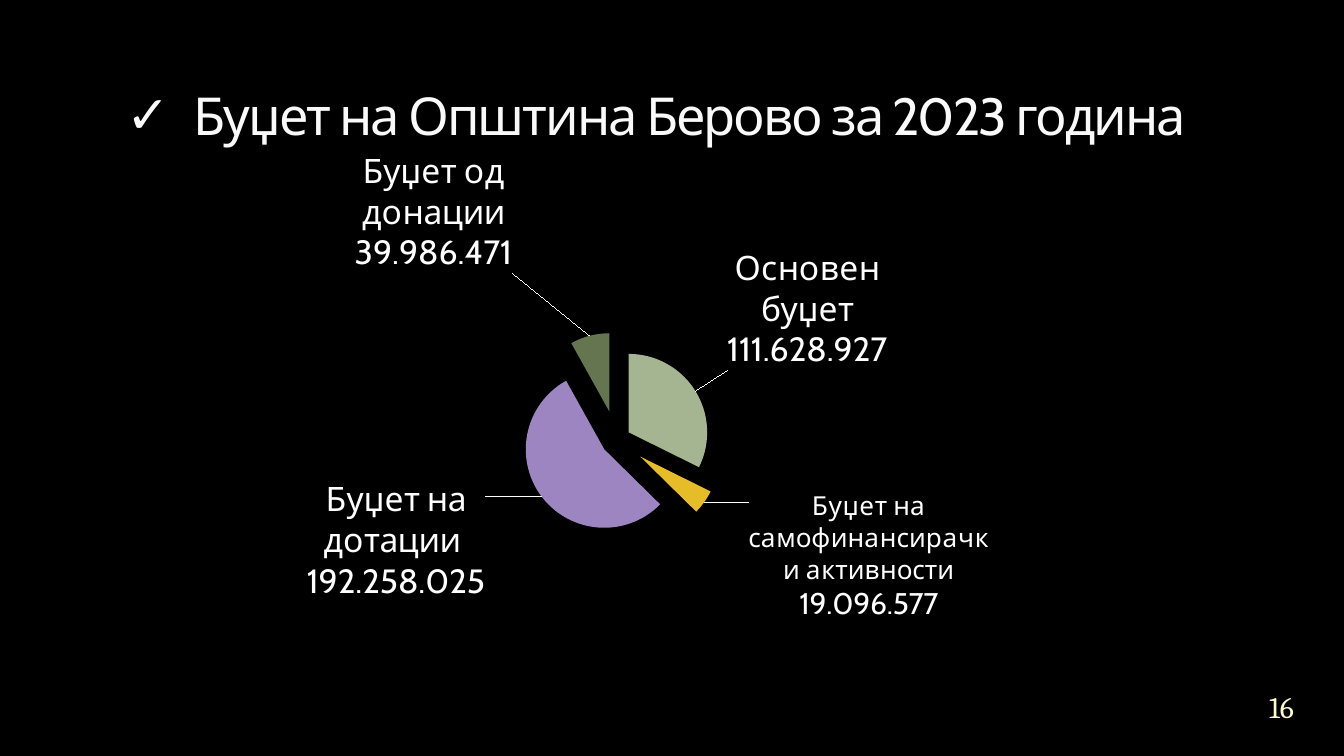
from lxml import etree
from pptx import Presentation
from pptx import util as u
from pptx.chart.data import CategoryChartData
from pptx.dml.color import RGBColor
from pptx.enum import chart as charts, text
from pptx.oxml import ns

COLORS = {
    "background": "000000",
    "title": "F9F9F9",
    "label": "FFFFFF",
    "number": "FEFAC9",
}

# category, share, colour, explosion, label shift (share of chart), label paragraphs of sized spans
SLICES = [
    ("Основен буџет", 32, "A5B592", 18, (0.02, -0.03),
     [[("Основен", 18)], [("буџет", 18)], [("111.628.927", 18)]]),
    ("Самофинансирачки активности", 5, "E7BC29", 37, (0.03, -0.03),
     [[("Буџет на самофинансирачки активности ", 14), ("19.096.577", 16)]]),
    ("Дотации", 54, "9C85C0", 20, (-0.04, -0.04),
     [[("Буџет на дотации ", 18)], [("192.258.025", 18)]]),
    ("Донации", 8, "64754F", 37, (-0.06, -0.1),
     [[("Буџет од донации", 18)], [("39.986.471", 18)]]),
]
PLOT_AREA = {"x": 0.37, "y": 0.31, "w": 0.2, "h": 0.45}


def write(para, words, size, font, color):
    """Add a formatted span of text to a paragraph."""
    span = para.add_run()
    span.text = words
    for name, value in {"size": u.Pt(size), "name": font, "bold": False}.items():
        setattr(span.font, name, value)
    span.font.color.rgb = RGBColor.from_string(COLORS[color])
    return span


def manual_layout(values):
    """Return a c:layout element holding the given settings."""
    layout = etree.Element(ns.qn("c:layout"))
    manual = etree.SubElement(layout, ns.qn("c:manualLayout"))
    for name, value in values.items():
        etree.SubElement(manual, ns.qn(f"c:{name}"), val=str(value))
    return layout


deck = Presentation()
deck.slide_width, deck.slide_height = u.Inches(10), u.Inches(10) * 9 // 16
page = deck.slides.add_slide(deck.slide_layouts[6])
page.background.fill.solid()
page.background.fill.fore_color.rgb = RGBColor.from_string(COLORS["background"])

# Budget pie
data = CategoryChartData()
data.categories = [row[0] for row in SLICES]
data.add_series("Series 1", [row[1] for row in SLICES])
place = map(u.Inches, (0.19, 1.08, 9.36, 4.1))
chart = page.shapes.add_chart(charts.XL_CHART_TYPE.PIE, *place, data).chart
chart.has_legend = False
chart.has_title = False
chart.font.name = "Cambria"
chart.font.size = u.Pt(10)
chart.font.color.rgb = RGBColor.from_string(COLORS["label"])

plot_area = chart._chartSpace.chart.plotArea
for old in plot_area.findall(ns.qn("c:layout")):
    plot_area.remove(old)
modes = {"layoutTarget": "inner", "xMode": "edge", "yMode": "edge"}
plot_area.insert(0, manual_layout({**modes, **PLOT_AREA}))

series = chart.plots[0].series[0]
series_xml = series._element
labels = series.data_labels
SHOWN = {"show_percentage": True, "show_category_name": True, "show_value": False,
         "position": charts.XL_LABEL_POSITION.OUTSIDE_END}
for name, value in SHOWN.items():
    setattr(labels, name, value)
labels.font.name = "Cambria"
labels.font.size = u.Pt(18)
labels.font.bold = True
labels.font.color.rgb = RGBColor.from_string(COLORS["label"])

for index, (_, _, color, explosion, shift, paragraphs) in enumerate(SLICES):
    point = series.points[index]
    point.format.fill.solid()
    point.format.fill.fore_color.rgb = RGBColor.from_string(color)
    point.format.line.fill.background()
    slice_xml = series_xml.findall(ns.qn("c:dPt"))[index]
    burst = etree.Element(ns.qn("c:explosion"), val=str(explosion))
    slice_xml.find(ns.qn("c:spPr")).addprevious(burst)

    label = point.data_label
    frame = label.text_frame
    frame.word_wrap = True
    for number, spans in enumerate(paragraphs):
        para = frame.add_paragraph() if number else frame.paragraphs[0]
        para.alignment = text.PP_ALIGN.CENTER
        for words, size in spans:
            write(para, words, size, "Cabin", "label")
    label.position = charts.XL_LABEL_POSITION.OUTSIDE_END
    label_xml = series_xml.findall(f"{ns.qn('c:dLbls')}/{ns.qn('c:dLbl')}")[index]
    label_xml.find(ns.qn("c:idx")).addnext(manual_layout(dict(zip("xy", shift))))
    for name, value in {"showVal": "0", "showCatName": "1", "showPercent": "1"}.items():
        label_xml.find(ns.qn(f"c:{name}")).set("val", value)

series_xml.find(ns.qn("c:dPt")).addprevious(etree.Element(ns.qn("c:explosion"), val="58"))

# Leader lines from slices to labels
labels_xml = series_xml.find(ns.qn("c:dLbls"))
for old in labels_xml.findall(ns.qn("c:showLeaderLines")):
    labels_xml.remove(old)
etree.SubElement(labels_xml, ns.qn("c:showLeaderLines"), val="1")
leader = etree.SubElement(labels_xml, ns.qn("c:leaderLines"))
line = etree.SubElement(etree.SubElement(leader, ns.qn("c:spPr")), ns.qn("a:ln"))
fill = etree.SubElement(line, ns.qn("a:solidFill"))
etree.SubElement(fill, ns.qn("a:srgbClr"), val=COLORS["label"])

# Title and page number
TEXTS = [
    ("Буџет на Општина Берово за 2023 година", (0.84, 0.29, 9.16, 0.9),
     28, "Cabin", "title", text.MSO_ANCHOR.BOTTOM, text.PP_ALIGN.LEFT),
    ("16", (9.2, 5.07, 0.67, 0.38),
     16, "Cambria", "number", text.MSO_ANCHOR.MIDDLE, text.PP_ALIGN.CENTER),
]
for words, place, size, font, color, anchor, align in TEXTS:
    box = page.shapes.add_textbox(*map(u.Inches, place))
    frame = box.text_frame
    frame.word_wrap = True
    frame.vertical_anchor = anchor
    for side in ("left", "top", "right", "bottom"):
        setattr(frame, f"margin_{side}", u.Inches(0.1))
    para = frame.paragraphs[0]
    para.alignment = align
    span = write(para, words, size, font, color)
    if color == "title":
        span.font._element.set("spc", "-100")
        props = para._p.get_or_add_pPr()
        props.set("marL", str(u.Inches(0.5)))
        props.set("indent", str(u.Inches(-0.5)))
        etree.SubElement(props, ns.qn("a:buFont"), typeface=font)
        etree.SubElement(props, ns.qn("a:buChar"), char="✓")

deck.save("out.pptx")
